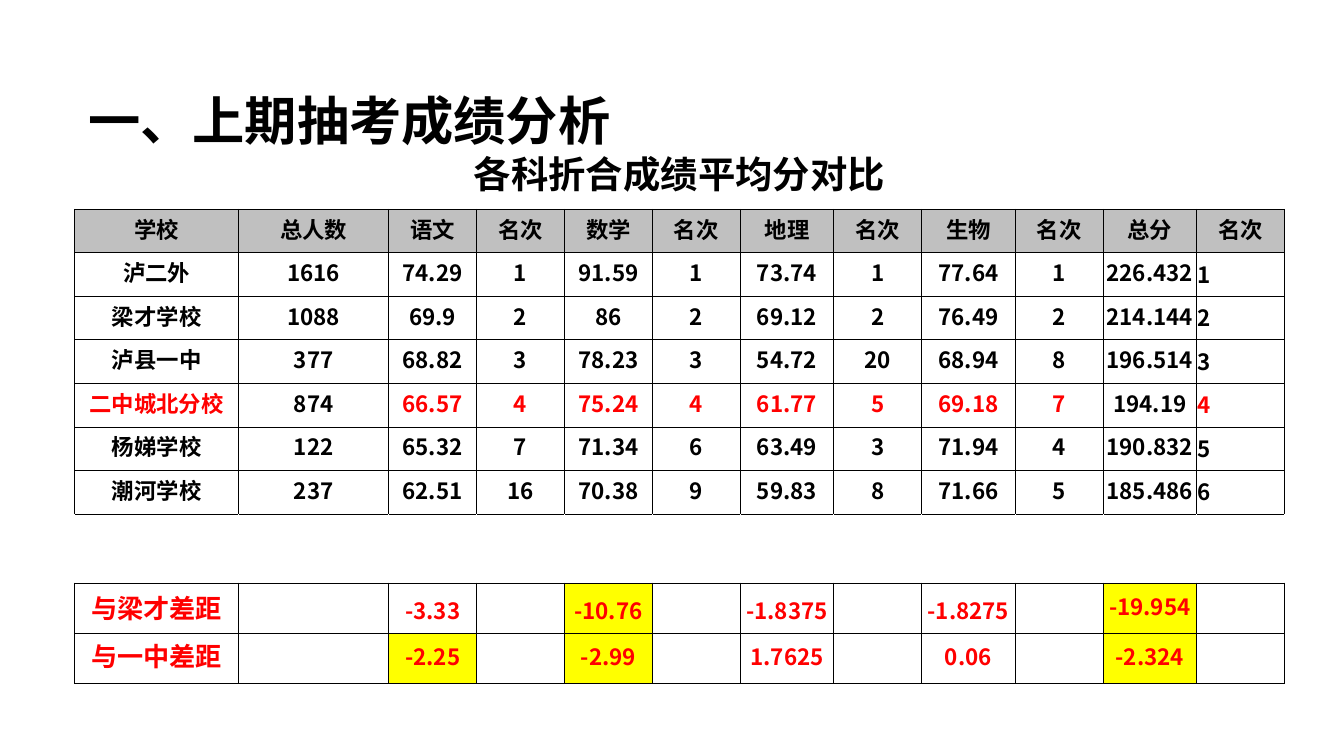
import pptx
import pptx.dml.color
import pptx.enum.text
import pptx.oxml.ns
import pptx.oxml
import pptx.util
import lxml.etree

Pt = pptx.util.Pt
RGBColor = pptx.dml.color.RGBColor
ALIGN = pptx.enum.text.PP_ALIGN
ANCHOR = pptx.enum.text.MSO_ANCHOR
qn = pptx.oxml.ns.qn

BLACK = RGBColor(0x00, 0x00, 0x00)
WHITE = RGBColor(0xFF, 0xFF, 0xFF)
RED = RGBColor(0xFF, 0x00, 0x00)
GREY = RGBColor(0xC0, 0xC0, 0xC0)
YELLOW = RGBColor(0xFF, 0xFF, 0x00)

NARROW, WIDE = 47.1, 50.1
COLUMN_WIDTHS = [87.9, 80.4] + [NARROW] * 4 + [WIDE, NARROW] * 3
ROW_HEIGHTS = [36.5] + [23.35] * 7 + [37] + [26.8] * 2
TOTAL, RANK = 10, 11

CAPTION = "各科折合成绩平均分对比"
HEADER = ["学校", "总人数", "语文", "名次", "数学", "名次",
          "地理", "名次", "生物", "名次", "总分", "名次"]
SCHOOLS = [
    ["泸二外", "1616", "74.29", "1", "91.59", "1", "73.74", "1", "77.64", "1", "226.432", "1"],
    ["梁才学校", "1088", "69.9", "2", "86", "2", "69.12", "2", "76.49", "2", "214.144", "2"],
    ["泸县一中", "377", "68.82", "3", "78.23", "3", "54.72", "20", "68.94", "8", "196.514", "3"],
    ["二中城北分校", "874", "66.57", "4", "75.24", "4", "61.77", "5", "69.18", "7", "194.19", "4"],
    ["杨娣学校", "122", "65.32", "7", "71.34", "6", "63.49", "3", "71.94", "4", "190.832", "5"],
    ["潮河学校", "237", "62.51", "16", "70.38", "9", "59.83", "8", "71.66", "5", "185.486", "6"],
]
OWN_SCHOOL = "二中城北分校"
GAPS = [
    ["与梁才差距", "", "-3.33", "", "-10.76", "", "-1.8375", "", "-1.8275", "", "-19.954", ""],
    ["与一中差距", "", "-2.25", "", "-2.99", "", "1.7625", "", "0.06", "", "-2.324", ""],
]
HIGHLIGHTED = [{4, TOTAL}, {2, 4, TOTAL}]


def write_text(frame, text, size=12, color=BLACK, font="Noto Sans CJK SC",
               align=ALIGN.CENTER):
    paragraph = frame.paragraphs[0]
    paragraph.alignment = align
    if not text:
        end = lxml.etree.SubElement(paragraph._p, qn("a:endParaRPr"))
        end.set("sz", str(size * 100))
        return
    run = paragraph.add_run()
    run.text = text
    run.font.size = Pt(size)
    run.font.bold = True
    run.font.color.rgb = color
    run.font.name = font
    east_asian = lxml.etree.SubElement(run._r.get_or_add_rPr(), qn("a:ea"))
    east_asian.set("typeface", "Noto Sans CJK SC")


class SlideBuilder:
    heading_font = "Arial"
    border_width = Pt(0.5)

    def __init__(self, slide):
        self.slide = slide

    def title(self, text, left, top, width, height):
        frame = self.slide.shapes.add_textbox(
            Pt(left), Pt(top), Pt(width), Pt(height)).text_frame
        frame.word_wrap = True
        frame.auto_size = pptx.enum.text.MSO_AUTO_SIZE.SHAPE_TO_FIT_TEXT
        write_text(frame, text, size=28, align=ALIGN.LEFT)

    def table(self, left, top):
        frame = self.slide.shapes.add_table(
            len(ROW_HEIGHTS), len(COLUMN_WIDTHS), Pt(left), Pt(top),
            Pt(sum(COLUMN_WIDTHS)), Pt(sum(ROW_HEIGHTS)))
        table = frame.table
        table.first_row = table.horz_banding = False
        for column, width in zip(table.columns, COLUMN_WIDTHS):
            column.width = Pt(width)
        for row, height in zip(table.rows, ROW_HEIGHTS):
            row.height = Pt(height)
        return table

    def borders(self, cell, left=BLACK, right=BLACK, top=BLACK, bottom=BLACK):
        properties = cell._tc.get_or_add_tcPr()
        for side, color in zip("LRTB", (left, right, top, bottom)):
            line = lxml.etree.SubElement(properties, qn(f"a:ln{side}"))
            line.set("w", str(int(self.border_width)))
            fill = lxml.etree.SubElement(line, qn("a:solidFill"))
            lxml.etree.SubElement(fill, qn("a:srgbClr")).set("val", str(color))

    def cell(self, cell, text="", fill=None, anchor=ANCHOR.MIDDLE, edges=None, **style):
        cell.margin_left = cell.margin_right = cell.margin_top = Pt(0.72)
        cell.margin_bottom = Pt(3.6)
        cell.vertical_anchor = anchor
        self.borders(cell, **(edges or {}))
        if fill is None:
            cell.fill.background()
        else:
            cell.fill.solid()
            cell.fill.fore_color.rgb = fill
        write_text(cell.text_frame, text, **style)


def fill_table(builder, table):
    heading = {"font": builder.heading_font}
    sides = {"left": WHITE, "right": WHITE}

    table.cell(0, 0).merge(table.cell(0, RANK))
    for column in range(len(COLUMN_WIDTHS)):
        builder.cell(table.cell(0, column), CAPTION if column == 0 else "",
                     size=20, edges={**sides, "top": WHITE}, **heading)
        builder.cell(table.cell(1, column), HEADER[column], fill=GREY, **heading)
        builder.cell(table.cell(8, column), edges=sides)

    for row, values in enumerate(SCHOOLS, start=2):
        for column, text in enumerate(values):
            style = dict(heading) if column == 0 else {}
            if values[0] == OWN_SCHOOL and column not in (1, TOTAL):
                style["color"] = RED
            if column == RANK:
                style.update(anchor=ANCHOR.BOTTOM, align=ALIGN.LEFT)
            builder.cell(table.cell(row, column), text, **style)

    for index, values in enumerate(GAPS):
        for column, text in enumerate(values):
            style = {"size": 14, **heading} if column == 0 else {}
            if index == 0 and column != TOTAL:
                style["anchor"] = ANCHOR.BOTTOM
            fill = YELLOW if column in HIGHLIGHTED[index] else None
            builder.cell(table.cell(9 + index, column), text, fill=fill,
                         color=RED, **style)


def main():
    presentation = pptx.Presentation()
    presentation.slide_width = Pt(720)
    presentation.slide_height = Pt(405)
    slide = presentation.slides.add_slide(presentation.slide_layouts[6])
    builder = SlideBuilder(slide)
    fill_table(builder, builder.table(40, 75.6))
    builder.title("一、上期抽考成绩分析", 40.3, 43.9, 463, 41)
    presentation.save("out.pptx")


if __name__ == "__main__":
    main()
